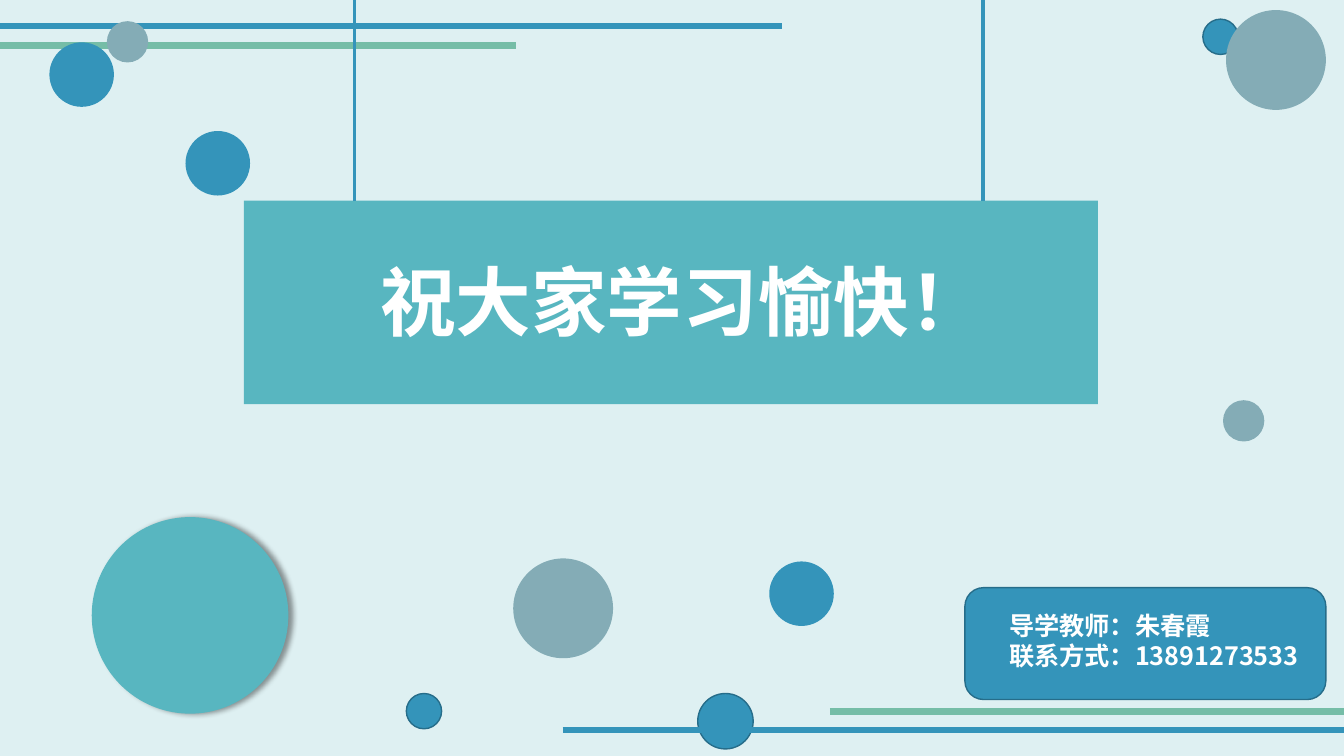
from lxml import etree
from pptx import Presentation
from pptx.dml.color import RGBColor
from pptx.enum.shapes import MSO_CONNECTOR, MSO_SHAPE
from pptx.enum.text import MSO_ANCHOR, PP_ALIGN
from pptx.oxml.ns import qn
from pptx.util import Inches, Pt

STRAIGHT = MSO_CONNECTOR.STRAIGHT
OVAL = MSO_SHAPE.OVAL
RECTANGLE = MSO_SHAPE.RECTANGLE
ROUNDED = MSO_SHAPE.ROUNDED_RECTANGLE
MIDDLE = MSO_ANCHOR.MIDDLE
LEFT = PP_ALIGN.LEFT

PALE = RGBColor(0xDE, 0xF0, 0xF2)
BLUE = RGBColor(0x34, 0x94, 0xBA)
DARK_BLUE = RGBColor(0x26, 0x6D, 0x8A)
TEAL = RGBColor(0x58, 0xB6, 0xC0)
GREEN = RGBColor(0x75, 0xBD, 0xA7)
GREY = RGBColor(0x84, 0xAC, 0xB6)
WHITE = RGBColor(0xFF, 0xFF, 0xFF)

CJK_FONT = "Noto Sans CJK SC"
SLIDE_WIDTH, SLIDE_HEIGHT = 13.33, 7.5

BUBBLES = [
    (7.63, 5.57, 0.64, BLUE, None),
    (6.92, 6.88, 0.55, BLUE, DARK_BLUE),
    (5.09, 5.54, 0.99, GREY, None),
    (12.13, 3.97, 0.41, GREY, None),
    (4.03, 6.88, 0.35, BLUE, DARK_BLUE),
    (0.49, 0.42, 0.64, BLUE, None),
    (1.06, 0.21, 0.41, GREY, None),
    (1.84, 1.3, 0.64, BLUE, None),
    (11.93, 0.19, 0.35, BLUE, DARK_BLUE),
    (12.16, 0.1, 0.99, GREY, None),
]


def add_line(slide, start, end, color, weight):
    line = slide.shapes.add_connector(
        STRAIGHT, *(Inches(value) for value in (*start, *end)))
    line.line.color.rgb = color
    line.line.width = Pt(weight)
    etree.SubElement(line._element.spPr, qn("a:effectLst"))


def add_block(slide, kind, box, fill, outline=None):
    block = slide.shapes.add_shape(kind, *(Inches(value) for value in box))
    block.shadow.inherit = False
    block.fill.solid()
    block.fill.fore_color.rgb = fill
    if outline is None:
        block.line.fill.background()
    else:
        block.line.color.rgb = outline
        block.line.width = Pt(1)
    return block


def add_span(para, text, size, font):
    span = para.add_run()
    span.text = text
    span.font.size = Pt(size)
    span.font.bold = True
    span.font.name = font
    span.font.color.rgb = WHITE
    east_asian = etree.SubElement(span._r.get_or_add_rPr(), qn("a:ea"))
    east_asian.set("typeface", CJK_FONT)


def add_stripes(slide, left, right, top, stripes):
    for offset, start, end, color in stripes:
        add_line(slide, (left + start, top + offset),
                 (min(left + end, right), top + offset), color, 4.5)


def add_bubbles(slide):
    large = add_block(slide, OVAL, (0.91, 5.13, 1.95, 1.95), TEAL)
    effects = large._element.spPr.find(qn("a:effectLst"))
    shadow = etree.SubElement(
        effects, qn("a:outerShdw"), blurRad=str(Pt(4)), dist=str(Pt(3)),
        dir="0", algn="l", rotWithShape="0")
    shade = etree.SubElement(shadow, qn("a:srgbClr"), val="000000")
    etree.SubElement(shade, qn("a:alpha"), val="40000")
    for left, top, size, fill, outline in BUBBLES:
        add_block(slide, OVAL, (left, top, size, size), fill, outline)


def add_hanging_banner(slide, left, top, width, height):
    add_block(slide, RECTANGLE, (left, top, width, height), TEAL)
    for offset in (1.1, 7.33):
        add_line(slide, (left + offset, 0), (left + offset, top), BLUE, 2.25)
    title = slide.shapes.title
    title.left, title.top = Inches(left + 1.25), Inches(top + 0.48)
    title.width, title.height = Inches(6.56), Inches(1.01)
    slide.shapes._spTree.append(title._element)
    frame = title.text_frame
    frame.word_wrap = True
    frame.vertical_anchor = MIDDLE
    para = frame.paragraphs[0]
    para.alignment = LEFT
    add_span(para, "祝大家学习愉快！", 54, "Arial")


def add_contact_card(slide, left, top, width, height):
    add_block(slide, ROUNDED, (left, top, width, height), BLUE, DARK_BLUE)
    box = slide.shapes.add_textbox(
        Inches(left + 0.34), Inches(top + 0.17),
        Inches(width - 0.34), Inches(0.71))
    frame = box.text_frame
    frame.word_wrap = True
    frame.vertical_anchor = MIDDLE
    for index, text in enumerate(("导学教师：朱春霞", "联系方式：13891273533")):
        para = frame.add_paragraph() if index else frame.paragraphs[0]
        para.line_spacing = Pt(21.6)
        add_span(para, text, 18, CJK_FONT)


def main():
    deck = Presentation()
    deck.slide_width = Inches(SLIDE_WIDTH)
    deck.slide_height = Inches(SLIDE_HEIGHT)
    slide = deck.slides.add_slide(deck.slide_layouts.get_by_name("Title Only"))
    slide.background.fill.solid()
    slide.background.fill.fore_color.rgb = PALE
    add_stripes(slide, 0, SLIDE_WIDTH, 0.26,
                [(0.19, 0, 5.12, GREEN), (0, 0, 7.76, BLUE)])
    add_bubbles(slide)
    add_stripes(slide, 5.58, SLIDE_WIDTH, 7.06,
                [(0, 2.65, 7.75, GREEN), (0.18, 0, 7.75, BLUE)])
    add_hanging_banner(slide, 2.42, 1.99, 8.47, 2.02)
    add_contact_card(slide, 9.57, 5.83, 3.58, 1.11)
    deck.save("out.pptx")


if __name__ == "__main__":
    main()
